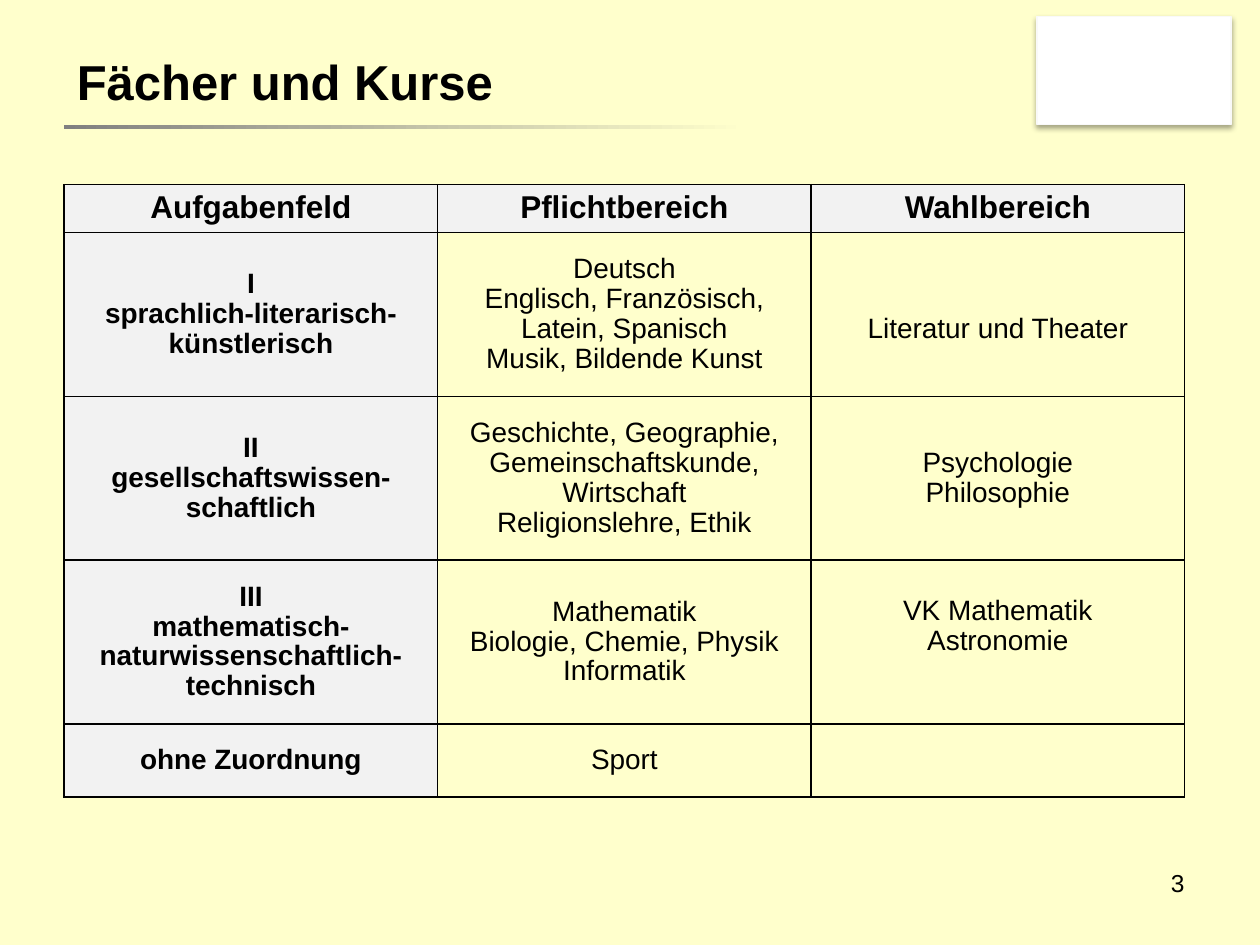
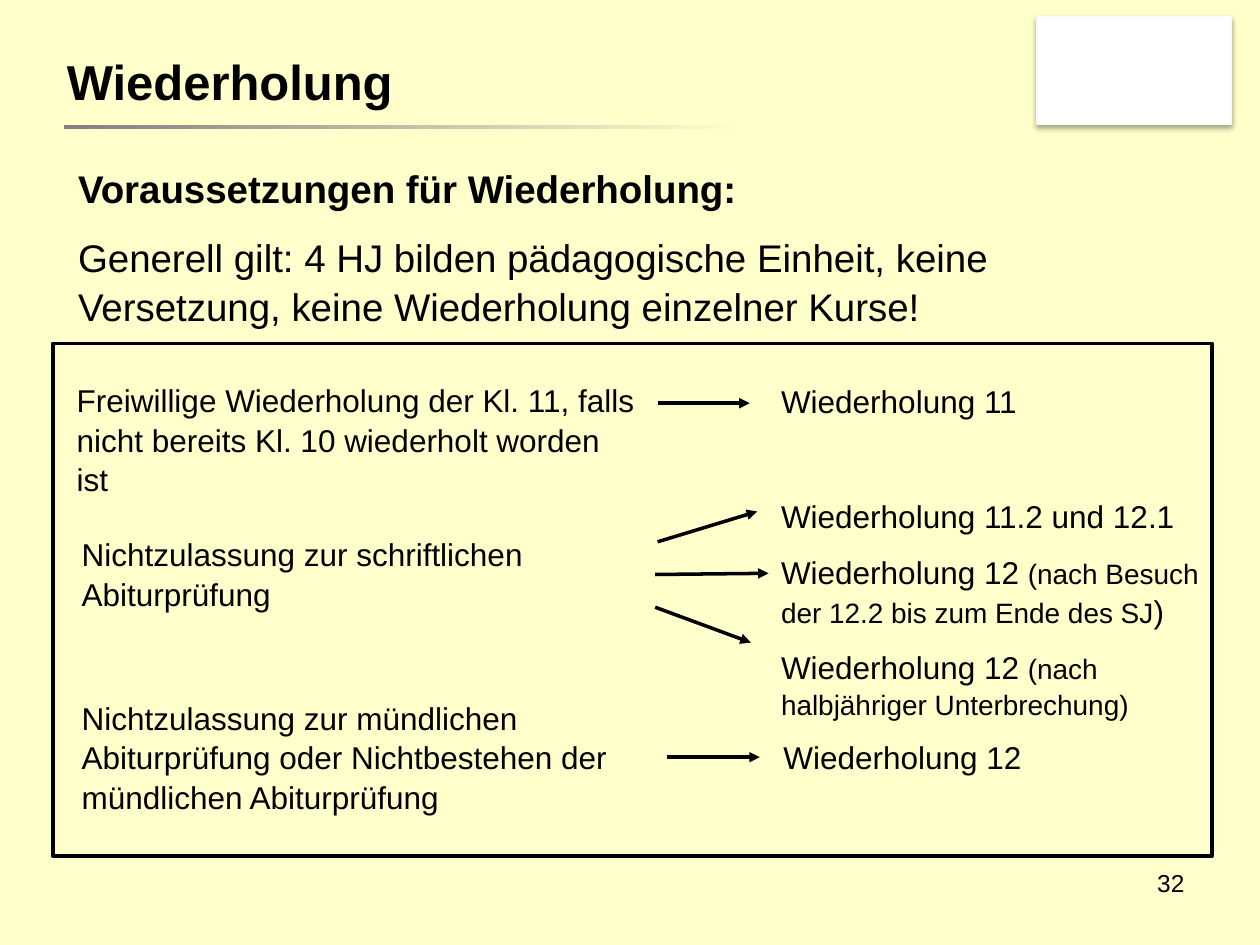
from dataclasses import dataclass

from lxml import etree
from pptx import Presentation
from pptx.dml.color import RGBColor
from pptx.enum.shapes import MSO_CONNECTOR, MSO_SHAPE
from pptx.enum.text import MSO_ANCHOR, MSO_AUTO_SIZE, PP_ALIGN
from pptx.oxml.ns import qn
from pptx.util import Pt

LEFT, CENTER, RIGHT = PP_ALIGN.LEFT, PP_ALIGN.CENTER, PP_ALIGN.RIGHT
TOP, MIDDLE = MSO_ANCHOR.TOP, MSO_ANCHOR.MIDDLE
NO_AUTOFIT = MSO_AUTO_SIZE.NONE
RECTANGLE = MSO_SHAPE.RECTANGLE
STRAIGHT = MSO_CONNECTOR.STRAIGHT

FONT = "Arial"
BLACK, WHITE, CREAM = "000000", "FFFFFF", "FFFFCC"
GREY, PALE_GREY, CARD_EDGE = "808080", "F2F2F2", "F9F9F9"
TITLE_ONLY, TITLE_AND_BODY = 5, 1
TABLE_LINE = 17.7
CELL_MARGIN = 3.6


@dataclass(frozen=True)
class Box:
    left: float
    top: float
    width: float
    height: float

    def lengths(self) -> tuple:
        return Pt(self.left), Pt(self.top), Pt(self.width), Pt(self.height)


@dataclass(frozen=True)
class Run:
    text: str
    size: float = 18
    bold: bool = False


@dataclass(frozen=True)
class Note:
    box: Box
    paragraphs: tuple


@dataclass(frozen=True)
class Arrow:
    start_x: float
    start_y: float
    end_x: float
    end_y: float


@dataclass(frozen=True)
class SubjectCell:
    lines: tuple = ()
    extra_top: float = 0
    extra_bottom: float = 0


CARD = Box(592.6, 9.4, 110.9, 61.9)
TITLE_RULE = Box(36.7, 71.3, 390.2, 2.2)
PAGE_NUMBER = Box(516.2, 491.8, 167.8, 37.4)
SUBJECT_TABLE = Box(36.7, 105.5, 640.2, 349.9)
CONDITIONS_FRAME = Box(30.2, 196.2, 662.4, 293)

HEADINGS = ("Aufgabenfeld", "Pflichtbereich", "Wahlbereich")
ROW_HEIGHTS = (27.4, 93.6, 93.6, 93.6, 41.7)
SUBJECT_ROWS = (
    (
        SubjectCell(("I", "sprachlich-literarisch-künstlerisch")),
        SubjectCell(("Deutsch", "Englisch, Französisch, Latein, Spanisch", "Musik, Bildende Kunst")),
        SubjectCell(("Literatur und Theater",), extra_top=TABLE_LINE),
    ),
    (
        SubjectCell(("II", "gesellschaftswissen-schaftlich")),
        SubjectCell(("Geschichte, Geographie, Gemeinschaftskunde, Wirtschaft", "Religionslehre, Ethik")),
        SubjectCell(("Psychologie", "Philosophie")),
    ),
    (
        SubjectCell(("III", "mathematisch-naturwissenschaftlich-technisch")),
        SubjectCell(("Mathematik", "Biologie, Chemie, Physik", "Informatik")),
        SubjectCell(("VK Mathematik", "Astronomie"), extra_bottom=TABLE_LINE),
    ),
    (SubjectCell(("ohne Zuordnung",)), SubjectCell(("Sport",)), SubjectCell()),
)

CONDITIONS = (
    Note(Box(36.7, 213.1, 334.5, 72.7), (
        (Run("Freiwillige Wiederholung der Kl. 11, falls nicht bereits Kl. 10 wiederholt worden ist"),),
    )),
    Note(Box(39.6, 301, 336.2, 51.1), (
        (Run("Nichtzulassung zur schriftlichen Abiturprüfung"),),
    )),
    Note(Box(39.6, 394.6, 336.2, 72.7), (
        (Run("Nichtzulassung zur mündlichen Abiturprüfung oder Nichtbestehen der mündlichen Abiturprüfung"),),
    )),
)
CONSEQUENCES = (
    Note(Box(439.2, 213.8, 254, 28.8), ((Run("Wiederholung 11"),),)),
    Note(Box(439.2, 279.4, 254, 135.4), (
        (Run("Wiederholung 11.2 und 12.1"),),
        (Run("Wiederholung 12 "), Run("(nach Besuch der 12.2 bis zum Ende des SJ", 16), Run(")")),
        (Run("Wiederholung 12 "), Run("(nach halbjähriger Unterbrechung)", 16)),
    )),
    Note(Box(440.6, 416.9, 254, 28.8), ((Run("Wiederholung 12"),),)),
)
ARROWS = (
    Arrow(375.8, 230.4, 428.4, 230.4),
    Arrow(375.8, 309.6, 432.7, 292.3),
    Arrow(374.4, 328.3, 439.2, 327.6),
    Arrow(374.4, 347, 429.1, 367.2),
    Arrow(380.9, 432.7, 434.2, 432.7),
)


def color(value: str) -> RGBColor:
    return RGBColor.from_string(value)


def add_element(parent, tag: str, **attributes):
    return etree.SubElement(parent, qn(tag), attributes)


def write_text(frame, paragraphs, *, align=LEFT, anchor=TOP, before=0, after=0, spacing=1.05) -> None:
    frame.word_wrap = True
    frame.auto_size = NO_AUTOFIT
    frame.vertical_anchor = anchor
    write_paragraphs(frame, paragraphs, align=align, before=before, after=after, spacing=spacing)


def write_paragraphs(frame, paragraphs, *, align=LEFT, before=0, after=0, spacing=1.05) -> None:
    for index, runs in enumerate(paragraphs):
        paragraph = frame.add_paragraph() if index else frame.paragraphs[0]
        properties = paragraph._p.get_or_add_pPr()
        properties.set("marL", "0")
        properties.set("indent", "0")
        add_element(properties, "a:buNone")
        paragraph.alignment = align
        paragraph.line_spacing = spacing
        paragraph.space_before = Pt(before if index else 0)
        paragraph.space_after = Pt(after)
        for item in runs:
            run = paragraph.add_run()
            run.text = item.text
            run.font.name = FONT
            run.font.size = Pt(item.size)
            run.font.bold = item.bold
            run.font.color.rgb = color(BLACK)


def place(shape, box: Box) -> None:
    shape.left, shape.top, shape.width, shape.height = box.lengths()


def add_text(slide, box: Box, paragraphs, **text_format) -> None:
    shape = slide.shapes.add_textbox(*box.lengths())
    write_text(shape.text_frame, paragraphs, **text_format)


def add_rectangle(slide, box: Box, *, fill=None, line=None, line_width=1.0):
    shape = slide.shapes.add_shape(RECTANGLE, *box.lengths())
    shape.shadow.inherit = False
    if fill:
        shape.fill.solid()
        shape.fill.fore_color.rgb = color(fill)
    else:
        shape.fill.background()
    if line:
        shape.line.color.rgb = color(line)
        shape.line.width = Pt(line_width)
    else:
        shape.line.fill.background()
    return shape


def add_card(slide) -> None:
    card = add_rectangle(slide, CARD, fill=WHITE, line=CARD_EDGE, line_width=0.75)
    effects = card._element.spPr.find(qn("a:effectLst"))
    shadow = add_element(
        effects, "a:outerShdw", blurRad=str(Pt(3.1)), dist=str(Pt(1.8)), dir="5400000", rotWithShape="0"
    )
    shadow_color = add_element(shadow, "a:srgbClr", val=BLACK)
    add_element(shadow_color, "a:alpha", val="35000")


def add_title_rule(slide) -> None:
    rule = add_rectangle(slide, TITLE_RULE)
    rule.fill.gradient()
    rule.fill.gradient_angle = 0
    for stop, value in zip(rule.fill.gradient_stops, (GREY, CREAM)):
        stop.color.rgb = color(value)


def add_arrow(slide, arrow: Arrow) -> None:
    connector = slide.shapes.add_connector(
        STRAIGHT, Pt(arrow.start_x), Pt(arrow.start_y), Pt(arrow.end_x), Pt(arrow.end_y)
    )
    connector.line.color.rgb = color(BLACK)
    connector.line.width = Pt(2)
    add_element(connector.line._get_or_add_ln(), "a:tailEnd", type="triangle")
    add_element(connector._element.spPr, "a:effectLst")


def add_page(presentation, layout: int, title: str, title_box: Box, number: str):
    slide = presentation.slides.add_slide(presentation.slide_layouts[layout])
    place(slide.shapes.title, title_box)
    write_text(slide.shapes.title.text_frame, [(Run(title, 28, True),)], anchor=MIDDLE, spacing=1.0)
    add_card(slide)
    add_title_rule(slide)
    add_text(slide, PAGE_NUMBER, [(Run(number, 14),)], align=RIGHT)
    return slide


def format_cell(cell, content: SubjectCell, *, size=16, bold=False, fill=None) -> None:
    properties = cell._tc.get_or_add_tcPr()
    for side in ("a:lnL", "a:lnR", "a:lnT", "a:lnB"):
        border = add_element(properties, side, w=str(Pt(1)))
        border_fill = add_element(border, "a:solidFill")
        add_element(border_fill, "a:srgbClr", val=BLACK)
    if fill:
        cell.fill.solid()
        cell.fill.fore_color.rgb = color(fill)
    else:
        cell.fill.background()
    cell.vertical_anchor = MIDDLE
    cell.margin_top = Pt(CELL_MARGIN + content.extra_top)
    cell.margin_bottom = Pt(CELL_MARGIN + content.extra_bottom)
    paragraphs = [(Run(line, size, bold),) for line in content.lines]
    write_paragraphs(cell.text_frame, paragraphs, align=CENTER, spacing=0.96)


def add_subject_table(slide) -> None:
    table = slide.shapes.add_table(len(ROW_HEIGHTS), len(HEADINGS), *SUBJECT_TABLE.lengths()).table
    table.first_row = False
    table.horz_banding = False
    for column in table.columns:
        column.width = Pt(SUBJECT_TABLE.width / len(HEADINGS))
    for row, height in zip(table.rows, ROW_HEIGHTS):
        row.height = Pt(height)
    for column_index, heading in enumerate(HEADINGS):
        format_cell(table.cell(0, column_index), SubjectCell((heading,)), size=18, bold=True, fill=PALE_GREY)
    for row_index, contents in enumerate(SUBJECT_ROWS, start=1):
        for column_index, content in enumerate(contents):
            is_field = column_index == 0
            format_cell(
                table.cell(row_index, column_index), content, bold=is_field, fill=PALE_GREY if is_field else None
            )


def build_subjects(presentation) -> None:
    slide = add_page(presentation, TITLE_ONLY, "Fächer und Kurse", Box(36.7, 15.1, 391.7, 62.6), "3")
    add_subject_table(slide)


def build_repetition(presentation) -> None:
    slide = add_page(presentation, TITLE_AND_BODY, "Wiederholung", Box(31, 15.1, 652.3, 62.6), "32")
    body = slide.placeholders[1]
    place(body, Box(37.4, 89.3, 651.6, 423.4))
    requirements = (
        (Run("Voraussetzungen für Wiederholung:", 22, True),),
        (Run("Generell gilt: 4 HJ bilden pädagogische Einheit, keine Versetzung, "
             "keine Wiederholung einzelner Kurse!", 22),),
    )
    write_text(body.text_frame, requirements, before=6, after=6)
    add_rectangle(slide, CONDITIONS_FRAME, line=BLACK, line_width=2)
    for note in CONDITIONS + CONSEQUENCES:
        add_text(slide, note.box, note.paragraphs, before=9)
    for arrow in ARROWS:
        add_arrow(slide, arrow)


def main() -> None:
    presentation = Presentation()
    presentation.slide_width, presentation.slide_height = Pt(720), Pt(540)
    background = presentation.slide_master.background.fill
    background.solid()
    background.fore_color.rgb = color(CREAM)
    build_subjects(presentation)
    build_repetition(presentation)
    presentation.save("out.pptx")


if __name__ == "__main__":
    main()
